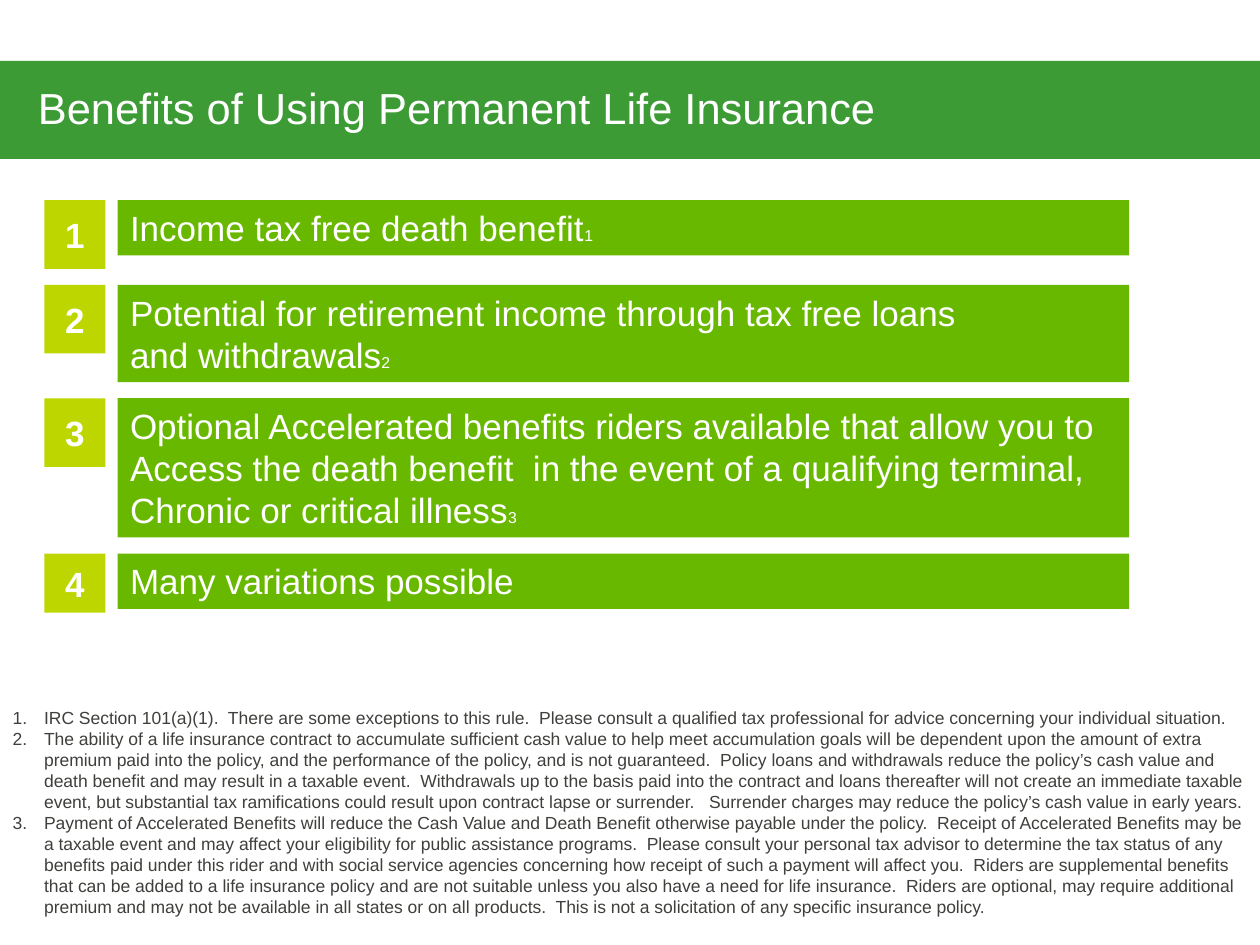
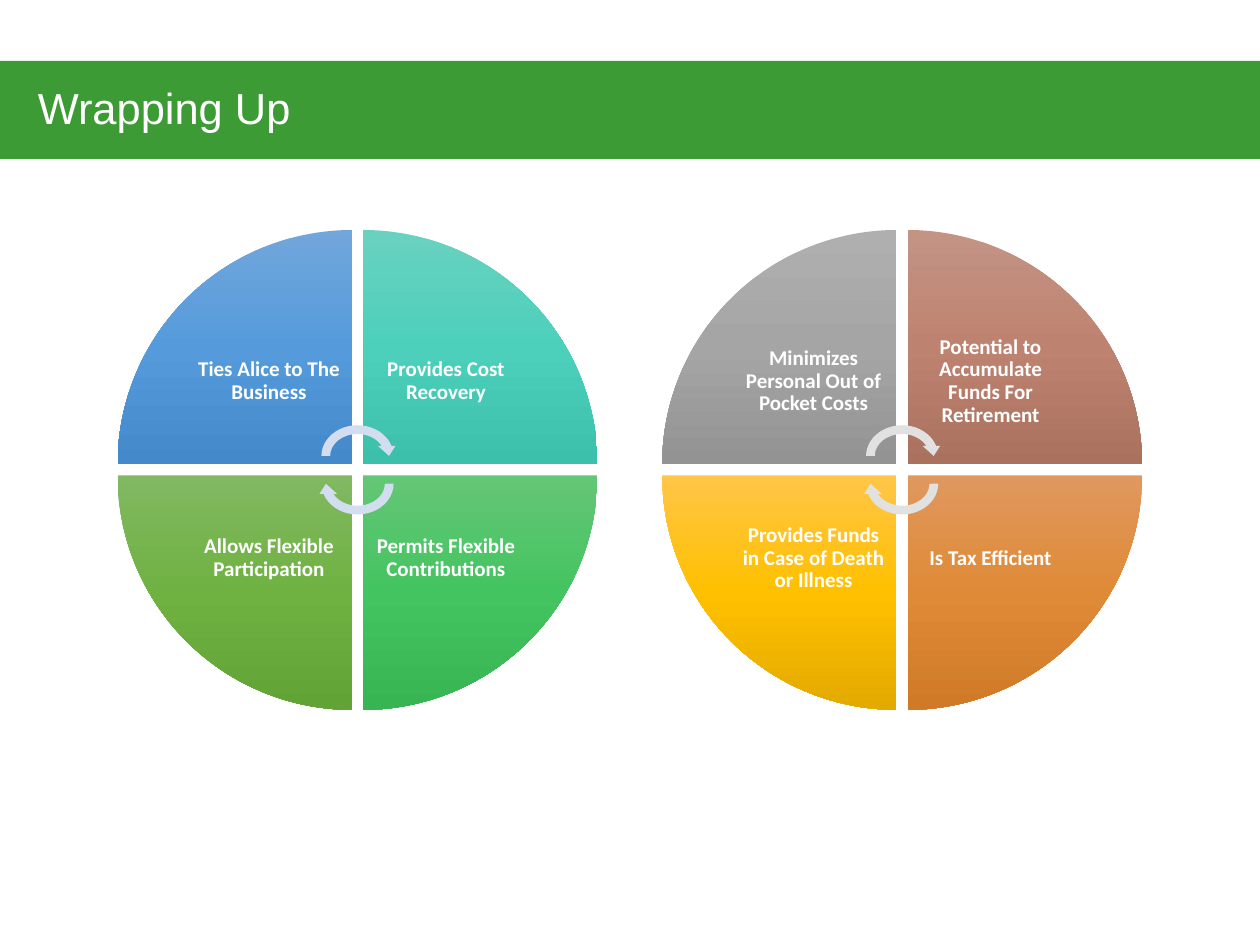
from dataclasses import dataclass
from typing import NamedTuple

from lxml import etree
from pptx import Presentation
from pptx.dml.color import RGBColor
from pptx.enum.shapes import MSO_SHAPE
from pptx.enum.text import MSO_ANCHOR, MSO_AUTO_SIZE, PP_ALIGN
from pptx.oxml import parse_xml
from pptx.oxml.ns import nsdecls, qn
from pptx.util import Pt

RECT, WEDGE, ARROW = MSO_SHAPE.RECTANGLE, MSO_SHAPE.PIE_WEDGE, MSO_SHAPE.CIRCULAR_ARROW
TOP, MIDDLE, BOTTOM = MSO_ANCHOR.TOP, MSO_ANCHOR.MIDDLE, MSO_ANCHOR.BOTTOM
LEFT, CENTER = PP_ALIGN.LEFT, PP_ALIGN.CENTER
NO_FIT = MSO_AUTO_SIZE.NONE
TITLE_AND_CONTENT, TITLE_ONLY = 1, 5


@dataclass(frozen=True)
class Theme:
    band: str = "3D9B35"
    bar: str = "69B800"
    number: str = "BDD600"
    white: str = "FFFFFF"
    note: str = "3F403C"
    font: str = "Arial"
    wheel_font: str = "Calibri"
    title_size: float = 24.8
    bar_size: float = 20
    mark_size: float = 9
    note_size: float = 10
    wheel_size: float = 12
    leading: float = 1.2


T = Theme()


class Box(NamedTuple):
    x: float
    y: float
    w: float
    h: float


class Benefit(NamedTuple):
    lines: list[str]
    mark: str
    square_h: float


class Wedge(NamedTuple):
    text: str
    stops: tuple[str, str, str]


class Wheel(NamedTuple):
    x: float
    arrow: str
    wedges: list[Wedge]


BENEFITS = [
    Benefit(["Income tax free death benefit"], "1", 39.2),
    Benefit(["Potential for retirement income through tax free loans",
             "and withdrawals"], "2", 39.2),
    Benefit(["Optional Accelerated benefits riders available that allow you to",
             "Access the death benefit  in the event of a qualifying terminal,",
             "Chronic or critical illness"], "3", 39.2),
    Benefit(["Many variations possible"], "", 33.8),
]

NOTES = [
    "IRC Section 101(a)(1).  There are some exceptions to this rule.  Please consult a "
    "qualified tax professional for advice concerning your individual situation.",
    "The ability of a life insurance contract to accumulate sufficient cash value to help "
    "meet accumulation goals will be dependent upon the amount of extra premium paid into "
    "the policy, and the performance of the policy, and is not guaranteed.  Policy loans "
    "and withdrawals reduce the policy’s cash value and death benefit and may result in a "
    "taxable event.  Withdrawals up to the basis paid into the contract and loans "
    "thereafter will not create an immediate taxable event, but substantial tax "
    "ramifications could result upon contract lapse or surrender.   Surrender charges may "
    "reduce the policy’s cash value in early years.",
    "Payment of Accelerated Benefits will reduce the Cash Value and Death Benefit otherwise "
    "payable under the policy.  Receipt of Accelerated Benefits may be a taxable event and "
    "may affect your eligibility for public assistance programs.  Please consult your "
    "personal tax advisor to determine the tax status of any benefits paid under this rider "
    "and with social service agencies concerning how receipt of such a payment will affect "
    "you.  Riders are supplemental benefits that can be added to a life insurance policy "
    "and are not suitable unless you also have a need for life insurance.  Riders are "
    "optional, may require additional premium and may not be available in all states or on "
    "all products.  This is not a solicitation of any specific insurance policy.",
]

# Wedges run clockwise from the top left
WHEELS = [
    Wheel(67.2, "D2DEEF", [
        Wedge("Ties Alice to The Business", ("71A6DB", "559BDB", "448ACA")),
        Wedge("Provides Cost Recovery", ("6AD1C0", "4CD0BC", "3CC0AC")),
        Wedge("Permits Flexible Contributions", ("64C677", "44C460", "36B552")),
        Wedge("Allows Flexible Participation", ("81B861", "6FB242", "62A336")),
    ]),
    Wheel(378.4, "E1E1E1", [
        Wedge("Minimizes Personal Out of Pocket Costs", ("AFAFAF", "A5A5A5", "939393")),
        Wedge("Potential to Accumulate Funds For Retirement", ("C39484", "BE8370", "AB715F")),
        Wedge("Is Tax Efficient", ("E0985F", "DF8A36", "D07A28")),
        Wedge("Provides Funds in Case of Death or Illness", ("FFC648", "FFC000", "E3AA00")),
    ]),
]
WHEEL_CELLS = [(0, 0), (1, 0), (1, 1), (0, 1)]


# Shared helpers
def place(sp, box: Box) -> None:
    sp.left, sp.top, sp.width, sp.height = (Pt(v) for v in box)


def solid(sp, color: str) -> None:
    sp.fill.solid()
    sp.fill.fore_color.rgb = RGBColor.from_string(color)


def add_shape(s, kind, box: Box, color: str = "", rotation: float = 0):
    sp = s.shapes.add_shape(kind, *(Pt(v) for v in box))
    sp.shadow.inherit = False
    sp.line.fill.background()
    sp.rotation = rotation
    if color:
        solid(sp, color)
    return sp


def add_run(p, text: str, size: float, color: str = T.white,
            font: str = T.font, bold: bool = False) -> None:
    r = p.add_run()
    r.text = text
    r.font.size, r.font.name, r.font.bold = Pt(size), font, bold
    r.font.color.rgb = RGBColor.from_string(color)


def setup_frame(sp, anchor, inset_x: float = 7.2, inset_y: float = 3.6):
    tf = sp.text_frame
    tf.word_wrap, tf.auto_size, tf.vertical_anchor = True, NO_FIT, anchor
    tf.margin_left = tf.margin_right = Pt(inset_x)
    tf.margin_top = tf.margin_bottom = Pt(inset_y)
    return tf


def paragraph(tf, index: int, align=LEFT, spacing=None):
    p = tf.add_paragraph() if index else tf.paragraphs[0]
    p.alignment, p.line_spacing = align, spacing
    p.space_before = Pt(0)
    return p


def gradient(sp, stops: tuple[str, str, str]) -> None:
    fill = parse_xml(f'<a:gradFill {nsdecls("a")} rotWithShape="0"><a:gsLst/>'
                     '<a:lin ang="5400000" scaled="0"/></a:gradFill>')
    for i, color in enumerate(stops):
        gs = etree.SubElement(fill[0], qn("a:gs"), pos=str(i * 50000))
        etree.SubElement(gs, qn("a:srgbClr"), val=color)
    sp._element.spPr.find(qn("a:prstGeom")).addnext(fill)


def add_slide(prs, layout: int, title: str):
    s = prs.slides.add_slide(prs.slide_layouts[layout])
    sp = s.shapes.title
    place(sp, Box(0, 34.8, 720, 56))
    solid(sp, T.band)
    tf = setup_frame(sp, BOTTOM, 21.6, 14.4)
    add_run(paragraph(tf, 0, LEFT, 0.9), title, T.title_size)
    return s


# Slide 1: numbered benefits and footnotes
def add_benefit(s, number: int, item: Benefit, y: float) -> float:
    leading = T.bar_size * T.leading
    bar_h = 7.6 + leading * len(item.lines)
    bar = add_shape(s, RECT, Box(67.2, y, 578, bar_h), T.bar)
    tf = setup_frame(bar, TOP)
    for i, line in enumerate(item.lines):
        p = paragraph(tf, i, LEFT, Pt(leading))
        add_run(p, line, T.bar_size)
    if item.mark:
        add_run(p, item.mark, T.mark_size)

    square = add_shape(s, RECT, Box(25.4, y, 34.9, item.square_h), T.number)
    p = paragraph(setup_frame(square, MIDDLE), 0, CENTER)
    add_run(p, str(number), T.bar_size, bold=True)
    return y + max(bar_h, item.square_h) + 9.2


def add_notes(sp) -> None:
    place(sp, Box(0, 400.3, 720, 139.7))
    tf = setup_frame(sp, TOP)
    for i, note in enumerate(NOTES):
        p = paragraph(tf, i, LEFT, Pt(T.note_size * T.leading))
        pPr = p._p.get_or_add_pPr()
        pPr.set("marL", str(Pt(18)))
        pPr.set("indent", str(Pt(-18)))
        etree.SubElement(pPr, qn("a:buFont"), typeface=T.font)
        etree.SubElement(pPr, qn("a:buAutoNum"), type="arabicPeriod")
        add_run(p, note, T.note_size, T.note)


def benefits_slide(prs) -> None:
    s = add_slide(prs, TITLE_AND_CONTENT, "Benefits of Using Permanent Life Insurance")
    y = 114.4
    for number, item in enumerate(BENEFITS, 1):
        y = add_benefit(s, number, item, y)
    add_notes(s.placeholders[1])


# Slide 2: two four-part wheels
def add_wheel(s, wheel: Wheel) -> None:
    top, size, pitch, label = 131.4, 134, 140.2, 94.9
    for i, (wedge, (col, row)) in enumerate(zip(wheel.wedges, WHEEL_CELLS)):
        x, y = wheel.x + col * pitch, top + row * pitch
        gradient(add_shape(s, WEDGE, Box(x, y, size, size), rotation=90 * i), wedge.stops)
        # Labels sit in the inner corner of each wedge
        shift = size - label
        box = Box(x + (1 - col) * shift, y + (1 - row) * shift, label, label)
        tb = s.shapes.add_textbox(*(Pt(v) for v in box))
        p = paragraph(setup_frame(tb, MIDDLE, 6.5, 6.5), 0, CENTER, 0.9)
        add_run(p, wedge.text, T.wheel_size, font=T.wheel_font, bold=True)

    # Arrows around the hub
    half, w, h = (pitch + size) / 2, 46.2, 40.2
    for shift, rotation in ((-7.9, 0), (7.9, 180)):
        box = Box(wheel.x + half - w / 2, top + half + shift - h / 2, w, h)
        add_shape(s, ARROW, box, wheel.arrow, rotation)


def wrap_up_slide(prs) -> None:
    s = add_slide(prs, TITLE_ONLY, "Wrapping Up")
    for wheel in WHEELS:
        add_wheel(s, wheel)


def main() -> None:
    prs = Presentation()
    prs.slide_width, prs.slide_height = Pt(720), Pt(540)
    benefits_slide(prs)
    wrap_up_slide(prs)
    prs.save("out.pptx")


if __name__ == "__main__":
    main()
